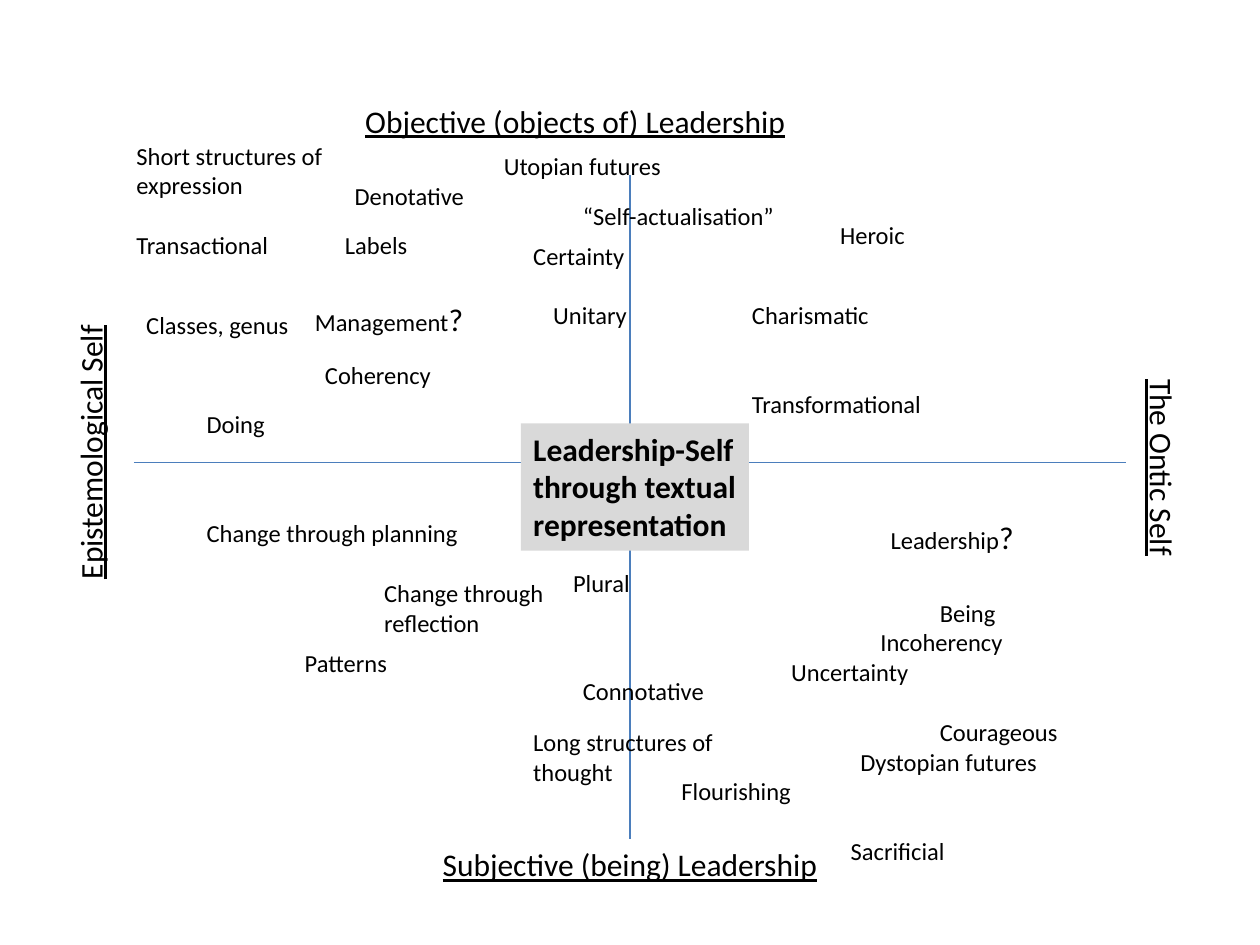
from lxml import etree
from pptx import Presentation
from pptx.dml.color import RGBColor
from pptx.enum.shapes import MSO_CONNECTOR, MSO_SHAPE
from pptx.enum.text import MSO_ANCHOR, MSO_AUTO_SIZE, PP_ALIGN
from pptx.oxml.ns import qn
from pptx.util import Pt

LEFT, CENTER = PP_ALIGN.LEFT, PP_ALIGN.CENTER
TOP = MSO_ANCHOR.TOP
FIT_SHAPE = MSO_AUTO_SIZE.SHAPE_TO_FIT_TEXT
STRAIGHT = MSO_CONNECTOR.STRAIGHT
RECTANGLE = MSO_SHAPE.RECTANGLE

COLORS = {"text": "000000", "axis": "4B7EBC", "core": "D9D9D9"}
WORD_SIZE, TITLE_SIZE = 14, 18
ONE_LINE, TWO_LINES, TITLE_LINE = 24.5, 41, 28.8


class LeadershipMap:
    font = "Calibri"

    def __init__(self, slide):
        self.slide = slide

    def color(self, name):
        return RGBColor.from_string(COLORS[name])

    def set_text(self, shape, text, size, align=LEFT, bold=False, underline=False):
        frame = shape.text_frame
        frame.text = text
        frame.word_wrap = True
        frame.auto_size = FIT_SHAPE
        frame.vertical_anchor = TOP
        paragraph = frame.paragraphs[0]
        paragraph.alignment = align
        for run in paragraph.runs:
            self.style(run, size, bold, underline)

    def style(self, run, size, bold=False, underline=False):
        run.font.name = self.font
        run.font.size = Pt(size)
        run.font.bold = bold
        run.font.underline = underline
        run.font.color.rgb = self.color("text")

    def box(self, left, top, width, height):
        return self.slide.shapes.add_textbox(Pt(left), Pt(top), Pt(width), Pt(height))

    def word(self, text, left, top, width, height=ONE_LINE):
        self.set_text(self.box(left, top, width, height), text, WORD_SIZE)

    def question(self, text, left, top, width):
        """A word followed by a larger question mark."""
        box = self.box(left, top, width, TITLE_LINE)
        self.set_text(box, text, WORD_SIZE)
        mark = box.text_frame.paragraphs[0].add_run()
        mark.text = "?"
        self.style(mark, TITLE_SIZE)

    def axis_title(self, text, left, top, width, align=CENTER, rotation=0):
        box = self.box(left, top, width, TITLE_LINE)
        box.rotation = rotation
        self.set_text(box, text, TITLE_SIZE, align, underline=True)

    def axis(self, x1, y1, x2, y2):
        line = self.slide.shapes.add_connector(STRAIGHT, Pt(x1), Pt(y1), Pt(x2), Pt(y2))
        line.line.color.rgb = self.color("axis")
        line.line.width = Pt(0.75)
        etree.SubElement(line._element.spPr, qn("a:effectLst"))

    def core(self, text, left, top, width, height):
        panel = self.slide.shapes.add_shape(
            RECTANGLE, Pt(left), Pt(top), Pt(width), Pt(height))
        panel.shadow.inherit = False
        panel.fill.solid()
        panel.fill.fore_color.rgb = self.color("core")
        panel.line.fill.background()
        self.set_text(panel, text, TITLE_SIZE, bold=True)


# Text, left, top, width
WORDS = [
    # Upper left
    ("Transactional", 70.9, 128, 124.5),
    ("Labels", 190, 128, 142),
    ("Denotative", 195.6, 100, 113),
    ("Classes, genus", 76.5, 173.5, 164),
    ("Coherency", 178.6, 202, 124.5),
    ("Doing", 111, 230.4, 119),
    ("Certainty", 297.6, 134, 164),
    ("Unitary", 309, 168, 79),
    # Upper right
    ("“Self-actualisation”", 326, 111.6, 130.3),
    ("Heroic", 473, 122.4, 153),
    ("Charismatic", 422.6, 168, 170),
    ("Transformational", 422.6, 219, 158),
    # Lower left
    ("Change through planning", 111, 292.3, 175.7),
    ("Patterns", 167, 366.5, 130.3),
    ("Plural", 320.4, 321, 90.7),
    # Lower right
    ("Being", 530, 338, 113),
    ("Incoherency", 496, 355, 147.6),
    ("Uncertainty", 445, 372.2, 142),
    ("Connotative", 326, 383, 119),
    ("Courageous", 530, 406, 158),
    ("Dystopian futures", 484.6, 423.4, 153.4),
    ("Flourishing", 382.3, 440, 130.3),
    ("Sacrificial", 479, 474, 187),
]
TWO_LINE_WORDS = [
    ("Short structures of expression", 70.9, 77, 153.4),
    ("Change through reflection", 212.4, 327, 142),
    ("Long structures of thought", 297.6, 412, 136),
]
QUESTIONS = [
    ("Management", 172.8, 168, 130.3),
    ("Leadership", 501.8, 292.3, 142),
]


def main():
    deck = Presentation()
    deck.slide_width, deck.slide_height = Pt(720), Pt(540)
    chart = LeadershipMap(deck.slides.add_slide(deck.slide_layouts[6]))

    # Axis titles and the word behind the vertical axis
    chart.word("Utopian futures", 280.8, 82.8, 142)
    chart.axis_title("Objective (objects of) Leadership", 201.6, 54.7, 294.5, LEFT)
    chart.axis_title("Subjective (being) Leadership", 190, 479.5, 340)
    chart.axis_title("Epistemological Self", -141, 244, 385, rotation=270)
    chart.axis_title("The Ontic Self", 496.8, 252.7, 334.8, rotation=90)

    # Axes
    chart.axis(76.5, 264.4, 643.5, 264.4)
    chart.axis(360, 100, 360, 479.5)

    # Words in the four quadrants
    for entry in WORDS:
        chart.word(*entry)
    for entry in TWO_LINE_WORDS:
        chart.word(*entry, height=TWO_LINES)
    for entry in QUESTIONS:
        chart.question(*entry)

    # Central theme
    chart.core("Leadership-Self through textual representation", 297.6, 242, 130.3, 72.7)

    deck.save("out.pptx")


if __name__ == "__main__":
    main()
